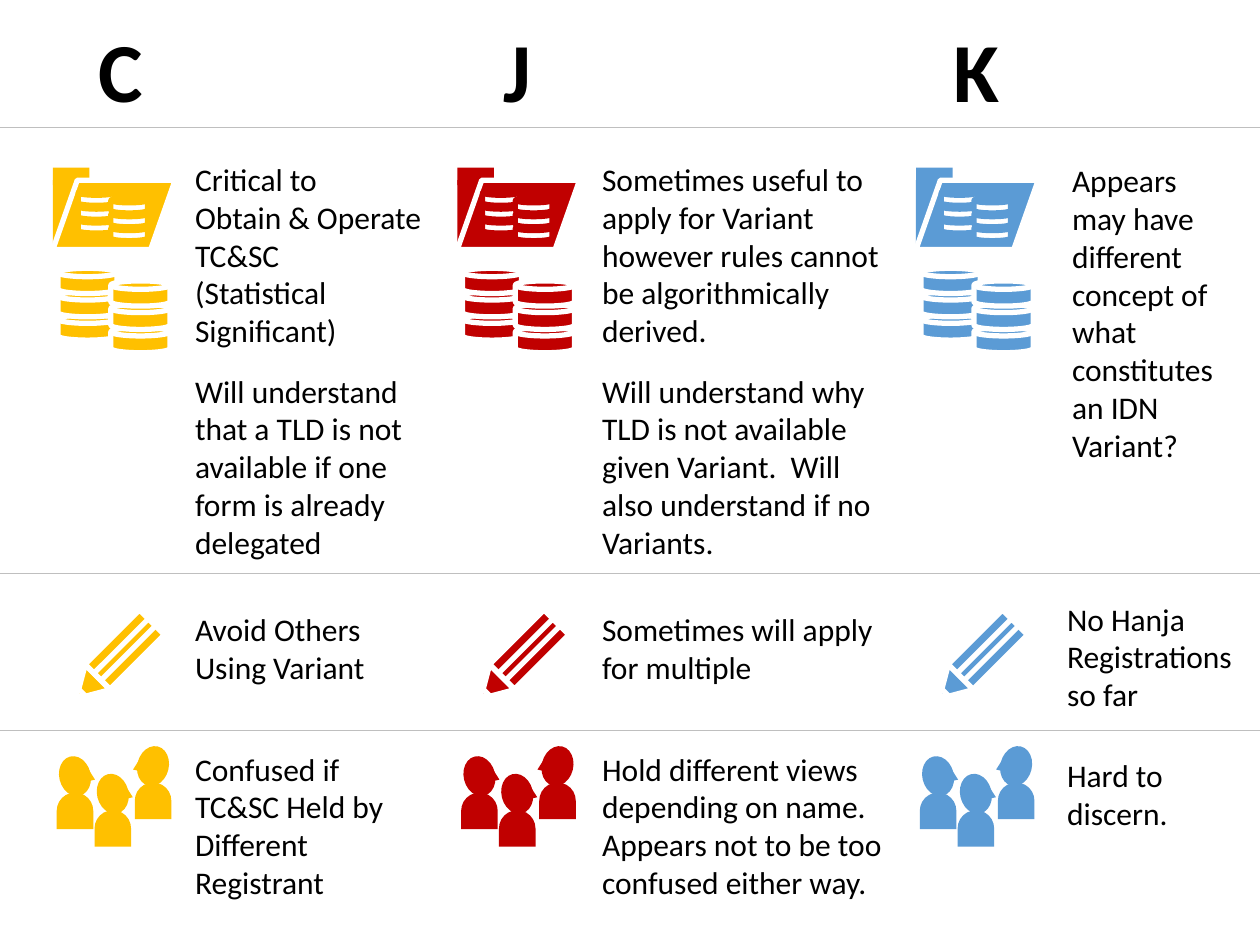
from lxml import etree
from pptx import Presentation
from pptx import util as u
from pptx.dml.color import RGBColor
from pptx.enum import shapes, text
from pptx.oxml.ns import qn

Kind = shapes.MSO_SHAPE
WHITE, BLACK, GREY = "FFFFFF", "000000", "BFBFBF"
COLUMNS = [
    {"left": 0.42, "color": "FFC000", "heading": ("C", 0.68, 0.56), "texts": [
        ((1.45, 1.22, 2.04, 1.62), True,
         ["Critical to", "Obtain & Operate TC&SC", "(Statistical Significant)"]),
        ((1.45, 2.9, 2.14, 1.62), True,
         ["Will understand that a TLD is not available if one form is already delegated"]),
        ((1.45, 4.79, 1.56, 0.71), False, ["Avoid Others", "Using Variant"]),
        ((1.45, 5.9, 1.71, 1.31), False,
         ["Confused if", "TC&SC Held by", "Different", "Registrant"]),
    ]},
    {"left": 3.63, "color": "C00000", "heading": ("J", 3.9, 0.42), "texts": [
        ((4.68, 1.22, 2.42, 1.62), True,
         ["Sometimes useful to apply for Variant however rules cannot be "
          "algorithmically derived."]),
        ((4.68, 2.9, 2.4, 1.62), True,
         ["Will understand why TLD is not available given Variant.  Will also "
          "understand if no Variants."]),
        ((4.68, 4.79, 2.37, 0.71), False, ["Sometimes will apply", "for multiple"]),
        ((4.68, 5.9, 2.45, 1.31), False,
         ["Hold different views", "depending on name.", "Appears not to be too",
          "confused either way."]),
    ]},
    {"left": 7.27, "color": "5B9BD5", "heading": ("K", 7.47, 0.57), "texts": [
        ((8.41, 1.23, 1.48, 2.52), True,
         ["Appears may have different concept of what constitutes an IDN Variant?"]),
        ((8.37, 4.71, 1.52, 1.01), False, ["No Hanja", "Registrations", "so far"]),
        ((8.37, 5.95, 1.01, 0.71), False, ["Hard to", "discern."]),
    ]},
]
DIVIDERS = [1.01, 4.55, 5.8]
PEOPLE = [(0.03, 6.29, False), (0.33, 6.43, False), (0.65, 6.21, True)]
PENCIL = [
    (Kind.ISOSCELES_TRIANGLE, 0.13, 5.34, 0.28, 0.24),
    (Kind.RECTANGLE, 0.43, 4.85, 0.28, 0.61),
    (Kind.ISOSCELES_TRIANGLE, 0.16, 5.48, 0.08, 0.07),
    (Kind.RECTANGLE, 0.53, 4.85, 0.08, 0.61),
]


def rgb(value):
    return RGBColor.from_string(value)


def add_part(group, kind, left, top, width, height, fill, line=None, turn=0, mirrored=False):
    part = group.shapes.add_shape(kind, *map(u.Inches, (left, top, width, height)))
    part.shadow.inherit = False
    part.fill.solid()
    part.fill.fore_color.rgb = rgb(fill)
    if line:
        part.line.color.rgb = rgb(line)
        part.line.width = u.Pt(3)
    else:
        part.line.fill.background()
    part.rotation = turn
    if mirrored:
        part.element.spPr.find(qn("a:xfrm")).set("flipH", "1")


def add_people(group, left, color):
    for offset, top, mirrored in PEOPLE:
        x = left + offset
        body, head, nose = (90, 13.7, 13.4) if mirrored else (270, 346.3, 346.6)
        nose_left = x if mirrored else x + 0.2
        add_part(group, Kind.FLOWCHART_DELAY, x, top, 0.29, 0.29, color, None, body, mirrored)
        add_part(group, Kind.OVAL, x + 0.02, top - 0.29, 0.25, 0.32, color, None, head, mirrored)
        add_part(group, Kind.ISOSCELES_TRIANGLE, nose_left, top - 0.22, 0.09, 0.13,
                 color, None, nose, mirrored)


def add_disks(group, left, bottom, width, height, step, shift, fill, line):
    for stack in range(2):
        for level in range(3):
            add_part(group, Kind.FLOWCHART_MAGNETIC_DISK, left + stack * shift[0],
                     bottom + stack * shift[1] - level * step, width, height, fill, line)


def add_coins(group, left, color):
    add_disks(group, left + 0.04, 2.5, 0.47, 0.2, 0.185, (0.42, 0.1), color, WHITE)


def add_pencil(group, left, color):
    for kind, offset, top, width, height in PENCIL:
        add_part(group, kind, left + offset, top, width, height, color, WHITE, 225)


def add_folder(group, left, color):
    add_part(group, Kind.RECTANGLE, left, 1.43, 0.77, 0.56, color)
    add_part(group, Kind.RECTANGLE, left, 1.33, 0.29, 0.14, color)
    add_part(group, Kind.FLOWCHART_DATA, left, 1.43, 0.97, 0.55, color, WHITE)
    add_disks(group, left + 0.2, 1.73, 0.29, 0.12, 0.11, (0.26, 0.06), WHITE, color)


def add_text(page, place, lines, size, wrap=False, bold=False):
    box = page.shapes.add_textbox(*map(u.Inches, place))
    frame = box.text_frame
    frame.word_wrap = wrap
    frame.auto_size = text.MSO_AUTO_SIZE.SHAPE_TO_FIT_TEXT
    for index, line in enumerate(lines):
        para = frame.add_paragraph() if index else frame.paragraphs[0]
        span = para.add_run()
        span.text = line
        span.font.name = "Calibri"
        span.font.size = u.Pt(size)
        span.font.bold = bold
        span.font.color.rgb = rgb(BLACK)


def add_divider(page, top):
    line = page.shapes.add_connector(shapes.MSO_CONNECTOR.STRAIGHT, 0, u.Inches(top),
                                     u.Inches(10), u.Inches(top))
    line.line.color.rgb = rgb(GREY)
    line.line.width = u.Pt(0.5)
    etree.SubElement(line.element.spPr, qn("a:effectLst"))


def main():
    deck = Presentation()
    deck.slide_width, deck.slide_height = u.Inches(10), u.Inches(7.5)
    page = deck.slides.add_slide(deck.slide_layouts[6])
    for column in reversed(COLUMNS):
        for draw in (add_people, add_coins, add_pencil, add_folder):
            draw(page.shapes.add_group_shape(), column["left"], column["color"])
    for column in COLUMNS:
        letter, left, width = column["heading"]
        add_text(page, (left, 0.1, width, 0.91), [letter], 48, bold=True)
        for place, wrap, lines in column["texts"]:
            add_text(page, place, lines, 18, wrap)
    for top in DIVIDERS:
        add_divider(page, top)
    deck.save("out.pptx")


if __name__ == "__main__":
    main()
